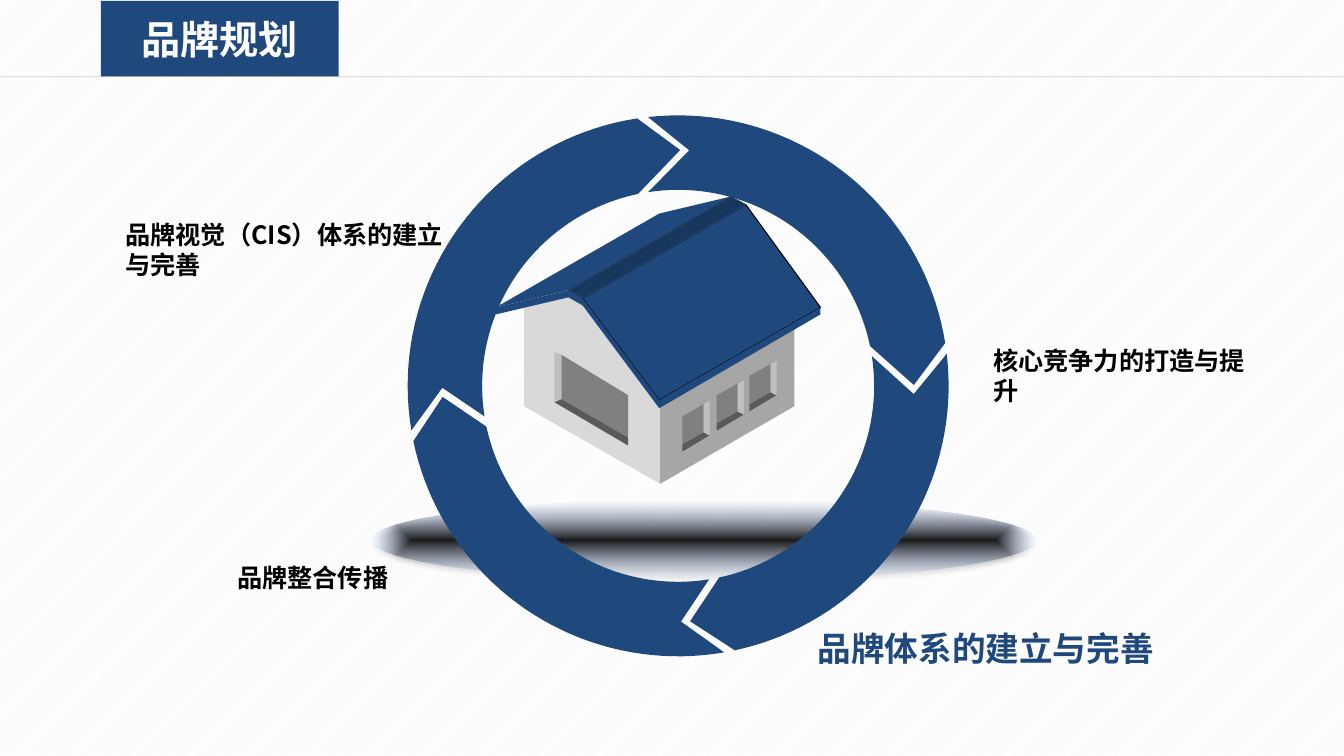
import math

import lxml.etree
import pptx
import pptx.dml.color
import pptx.enum.dml
import pptx.enum.shapes
import pptx.enum.text
import pptx.oxml
import pptx.oxml.ns
import pptx.util

Pt = pptx.util.Pt
SHAPES = pptx.enum.shapes.MSO_SHAPE
ALIGN = pptx.enum.text.PP_ALIGN
FONT = "Noto Sans CJK SC"
NAVY = "1F497D"
A_NS = pptx.oxml.ns.nsdecls("a")


def color(hex_value):
    return pptx.dml.color.RGBColor.from_string(hex_value)


def polygon(points, fill, outline=None):
    corners = [(Pt(x), Pt(y)) for x, y in points]
    builder = slide.shapes.build_freeform(*corners[0])
    builder.add_line_segments(corners[1:], close=True)
    shape = builder.convert_to_shape()
    shape.shadow.inherit = False
    shape.fill.solid()
    shape.fill.fore_color.rgb = color(fill)
    if outline:
        shape.line.color.rgb = color(outline)
        shape.line.width = Pt(0.75)
    else:
        shape.line.fill.background()


deck = pptx.Presentation()
deck.slide_width, deck.slide_height = Pt(960), Pt(540)
slide = deck.slides.add_slide(deck.slide_layouts[6])

# Striped background
stripes = slide.background.fill
stripes.patterned()
stripes.pattern = pptx.enum.dml.MSO_PATTERN.DARK_UPWARD_DIAGONAL
stripes.fore_color.rgb = color("F2F2F2")
stripes.back_color.rgb = color("FFFFFF")

# Soft ground shade under the ring
ground = slide.shapes.add_shape(SHAPES.OVAL, Pt(473.76), Pt(149.04), Pt(57.6), Pt(473.76))
ground.rotation = 270
ground.line.fill.background()
ground_props = ground.fill._xPr
gradient = pptx.oxml.parse_xml(
    f'<a:gradFill {A_NS} rotWithShape="1"><a:gsLst>'
    '<a:gs pos="0"><a:srgbClr val="000000"><a:alpha val="85000"/></a:srgbClr></a:gs>'
    '<a:gs pos="100000"><a:srgbClr val="A4C4FF"><a:alpha val="0"/></a:srgbClr></a:gs>'
    '</a:gsLst><a:path path="shape">'
    '<a:fillToRect l="50000" t="50000" r="50000" b="50000"/></a:path></a:gradFill>')
ground_props.find(pptx.oxml.ns.qn("a:prstGeom")).addnext(gradient)
ground_props.append(pptx.oxml.parse_xml(
    f'<a:effectLst {A_NS}><a:outerShdw blurRad="{Pt(3.1)}" dist="{Pt(1.8)}" dir="5400000" '
    'rotWithShape="0"><a:srgbClr val="000000"><a:alpha val="35000"/></a:srgbClr>'
    '</a:outerShdw></a:effectLst>'))

# Ring of four arrows; each joint holds the outer, tip and inner angles
# where one arrow ends, in degrees clockwise from the top
RING_X, RING_Y = 484.4, 275.6
OUTER, MIDDLE, INNER = 193.2, 168.4, 140
JOINT_GAPS = (2.3, 2.2, 3)
ARC_STEPS = 40
joints = [(-8.7, 0.5, -11.8), (80.9, 89.8, 78.3), (167.9, 177.1, 167.9), (258.2, 267.3, 258)]
joints.append(tuple(angle + 360 for angle in joints[0]))
for tail, head in zip(joints, joints[1:]):
    outer_start, notch, inner_start = (a + gap for a, gap in zip(tail, JOINT_GAPS))
    outer_end, tip, inner_end = head
    steps = [i / ARC_STEPS for i in range(ARC_STEPS + 1)]
    outline = [(OUTER, outer_start + (outer_end - outer_start) * t) for t in steps]
    outline.append((MIDDLE, tip))
    outline += [(INNER, inner_end + (inner_start - inner_end) * t) for t in steps]
    outline.append((MIDDLE, notch))
    polygon([(RING_X + radius * math.sin(math.radians(angle)),
              RING_Y - radius * math.cos(math.radians(angle))) for radius, angle in outline], NAVY)

# House: walls and roof
house = [
    ([(421.9, 207.4), (471.6, 270), (471.6, 345.6), (374.4, 290.2), (374.4, 213.8)], "D9D9D9", None),
    ([(567.4, 213.8), (567.4, 290.2), (471.6, 345.6), (471.6, 270)], "A6A6A6", None),
    ([(532.8, 146.2), (586.1, 219.6), (470.9, 285.8), (416.2, 213.1)], NAVY, "000000"),
    ([(470.9, 152.6), (522, 140.4), (406.1, 207.4), (354.2, 219.6)], NAVY, None),
    ([(532.8, 146.2), (416.2, 213.1), (406.1, 207.4), (522, 140.4)], "17375E", "254061"),
    ([(470.9, 285.8), (470.9, 291.6), (586.1, 224.6), (586.1, 219.6)], NAVY, None),
    ([(416.2, 213.1), (406.1, 207.4), (354.2, 219.6), (354.2, 224.6), (406.1, 212.4),
      (416.2, 218.2), (470.9, 291.6), (470.9, 285.8)], NAVY, None),
]
for points, fill, outline in house:
    polygon(points, fill, outline)

# House: three side windows, each with glass, sill and jamb
window_parts = [
    ([(0, 0), (-15.1, 8.6), (-15.1, 28.8), (0, 20.2)], "808080"),
    ([(0, 20.2), (-15.1, 28.8), (-15.1, 33.8), (4.3, 22.3)], "595959"),
    ([(4.3, -2), (0, 0), (0, 20.2), (4.3, 22.3)], "BFBFBF"),
]
for window_x, window_y in [(502.6, 288.7), (527, 273.8), (550.4, 260)]:
    for points, fill in window_parts:
        polygon([(window_x + x, window_y + y) for x, y in points], fill)

# House: front window
polygon([(401, 253.4), (448.6, 282.2), (448.6, 312.5), (401, 285.1)], "808080")
polygon([(401, 285.1), (448.6, 312.5), (448.6, 318.2), (396, 287.3)], "595959")
polygon([(401, 253.4), (401, 285.1), (396, 287.3), (396, 251.3)], "BFBFBF")

# Labels and title
labels = [
    ("品牌视觉（CIS）体系的建立与完善", 79.9, 151.9, 262.1, 53.3, 18, "000000", ALIGN.LEFT),
    ("品牌体系的建立与完善", 573.1, 443.5, 262.1, 38.9, 24, NAVY, ALIGN.CENTER),
    ("核心竞争力的打造与提升", 699.8, 241.9, 216.7, 53.3, 18, "000000", ALIGN.LEFT),
    ("品牌整合传播", 159.8, 396.7, 245.5, 31.7, 18, "000000", ALIGN.LEFT),
    ("品牌规划", 72, 0.7, 170, 54, 28, "FFFFFF", ALIGN.CENTER),
]
for text, left, top, width, height, size, ink, align in labels:
    box = (Pt(left), Pt(top), Pt(width), Pt(height))
    if text == "品牌规划":
        label = slide.shapes.add_shape(SHAPES.RECTANGLE, *box)
        label.shadow.inherit = False
        label.fill.solid()
        label.fill.fore_color.rgb = color(NAVY)
        label.line.fill.background()
        label.text_frame.vertical_anchor = pptx.enum.text.MSO_ANCHOR.MIDDLE
    else:
        label = slide.shapes.add_textbox(*box)
        frame = label.text_frame
        frame.margin_left = frame.margin_right = Pt(9.6)
        frame.margin_top = frame.margin_bottom = Pt(4.8)
        frame.word_wrap = align == ALIGN.LEFT
        frame.auto_size = pptx.enum.text.MSO_AUTO_SIZE.SHAPE_TO_FIT_TEXT
    paragraph = label.text_frame.paragraphs[0]
    paragraph.text = text
    paragraph.alignment = align
    paragraph.font.size = Pt(size)
    paragraph.font.bold = True
    paragraph.font.color.rgb = color(ink)
    paragraph.font.name = FONT
    east_asian = lxml.etree.SubElement(paragraph.font._element, pptx.oxml.ns.qn("a:ea"))
    east_asian.set("typeface", FONT)

# Header rule
rule = slide.shapes.add_connector(
    pptx.enum.shapes.MSO_CONNECTOR.STRAIGHT, Pt(0), Pt(54.7), Pt(960), Pt(54.7))
rule.line.width = Pt(0.75)
rule.line.color.rgb = color("BFBFBF")
rule_color = rule.line._ln.find(".//" + pptx.oxml.ns.qn("a:srgbClr"))
lxml.etree.SubElement(rule_color, pptx.oxml.ns.qn("a:alpha")).set("val", "50000")
lxml.etree.SubElement(rule._element.spPr, pptx.oxml.ns.qn("a:effectLst"))

deck.save("out.pptx")
